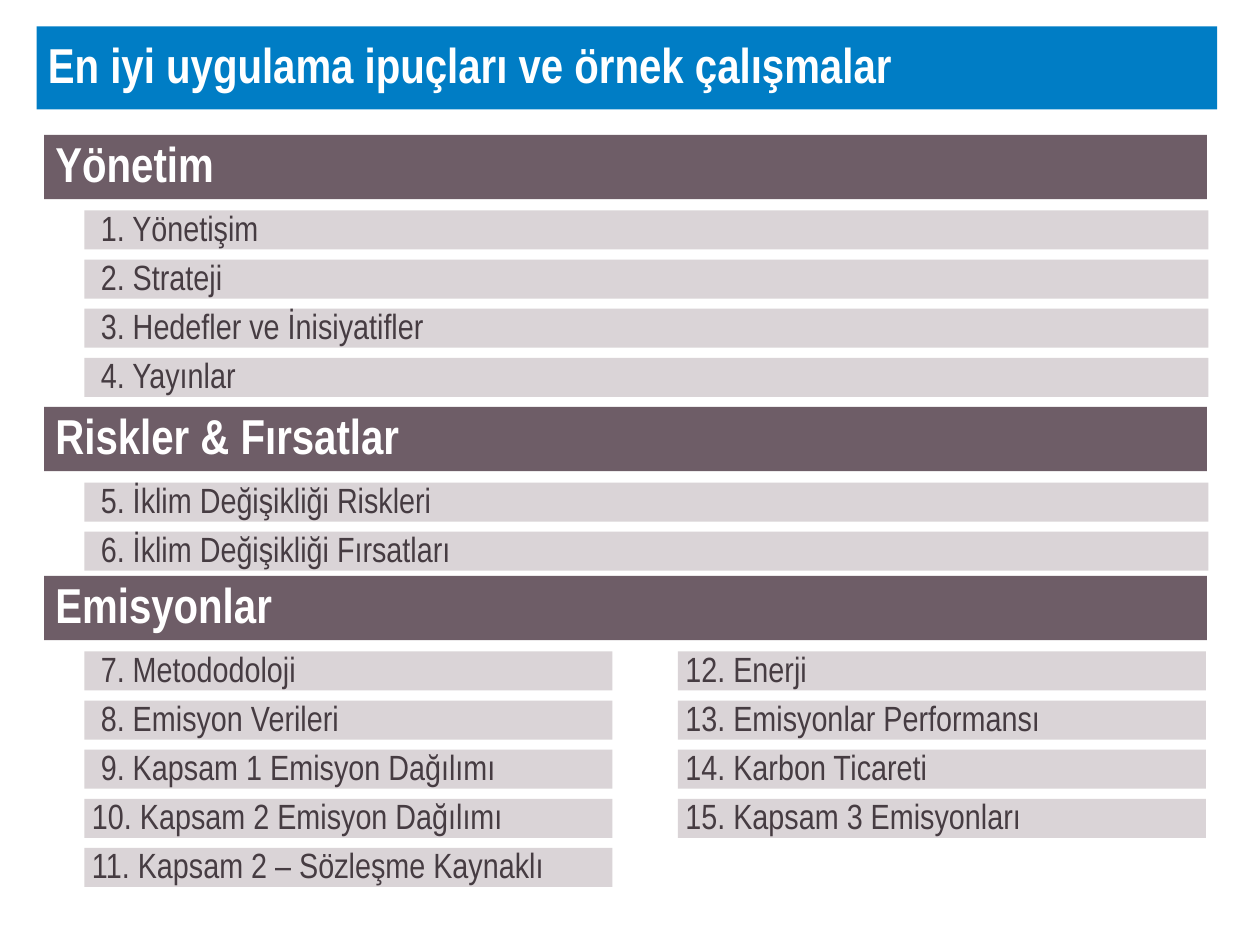
from pptx import Presentation
from pptx.dml.color import RGBColor
from pptx.enum.shapes import MSO_SHAPE
from pptx.enum.text import MSO_ANCHOR, PP_ALIGN
from pptx.util import Inches, Pt

RECTANGLE = MSO_SHAPE.RECTANGLE
MIDDLE = MSO_ANCHOR.MIDDLE
LEFT = PP_ALIGN.LEFT

BLUE = RGBColor(0x00, 0x7D, 0xC5)
PLUM = RGBColor(0x6E, 0x5D, 0x67)
PALE = RGBColor(0xDA, 0xD4, 0xD7)
DARK = RGBColor(0x46, 0x3C, 0x42)
WHITE = RGBColor(0xFF, 0xFF, 0xFF)

prs = Presentation()
prs.slide_width = Inches(10)
prs.slide_height = Inches(7.5)
slide = prs.slides.add_slide(prs.slide_layouts[6])


def add_bar(text, *, left, top, width, height, fill,
            size=28, color=WHITE, bold=True, inset=0.09):
    bar = slide.shapes.add_shape(
        RECTANGLE, Inches(left), Inches(top), Inches(width), Inches(height))
    bar.shadow.inherit = False
    bar.fill.solid()
    bar.fill.fore_color.rgb = fill
    bar.line.fill.background()
    frame = bar.text_frame
    frame.word_wrap = True
    frame.vertical_anchor = MIDDLE
    frame.margin_left = Inches(inset)
    frame.margin_top = frame.margin_right = frame.margin_bottom = 0
    paragraph = frame.paragraphs[0]
    paragraph.alignment = LEFT
    paragraph.line_spacing = 0.9
    run = paragraph.add_run()
    run.text = text
    run.font.name = "Arial Narrow"
    run.font.size = Pt(size)
    run.font.bold = bold
    run.font.color.rgb = color


# Title
add_bar("En iyi uygulama ipuçları ve örnek çalışmalar",
        left=0.29, top=0.21, width=9.37, height=0.66, fill=BLUE)

# Sections: heading, top, width of a topic, columns of topics by left edge
FULL, HALF = 8.92, 4.19
FIRST_COLUMN, SECOND_COLUMN = 0.67, 5.38
sections = [
    ("Yönetim", 1.07, FULL, {
        FIRST_COLUMN: ["Yönetişim", "Strateji", "Hedefler ve İnisiyatifler",
                       "Yayınlar"]}),
    ("Riskler & Fırsatlar", 3.23, FULL, {
        FIRST_COLUMN: ["İklim Değişikliği Riskleri",
                       "İklim Değişikliği Fırsatları"]}),
    ("Emisyonlar", 4.57, HALF, {
        FIRST_COLUMN: ["Metododoloji", "Emisyon Verileri",
                       "Kapsam 1 Emisyon Dağılımı",
                       "Kapsam 2 Emisyon Dağılımı",
                       "Kapsam 2 – Sözleşme Kaynaklı"],
        SECOND_COLUMN: ["Enerji", "Emisyonlar Performansı",
                        "Karbon Ticareti", "Kapsam 3 Emisyonları"]}),
]

# Topics are numbered through all sections
TOPIC_OFFSET, TOPIC_PITCH = 0.6, 0.39
number = 0
for heading, section_top, topic_width, columns in sections:
    add_bar(heading, left=0.35, top=section_top, width=9.23, height=0.51,
            fill=PLUM)
    for column_left, topics in columns.items():
        for row, topic in enumerate(topics):
            number += 1
            add_bar(f"{number}. {topic}", left=column_left,
                    top=section_top + TOPIC_OFFSET + row * TOPIC_PITCH,
                    width=topic_width, height=0.31, fill=PALE,
                    size=20, color=DARK, bold=False,
                    inset=0.13 if number < 10 else 0.06)

prs.save("out.pptx")
